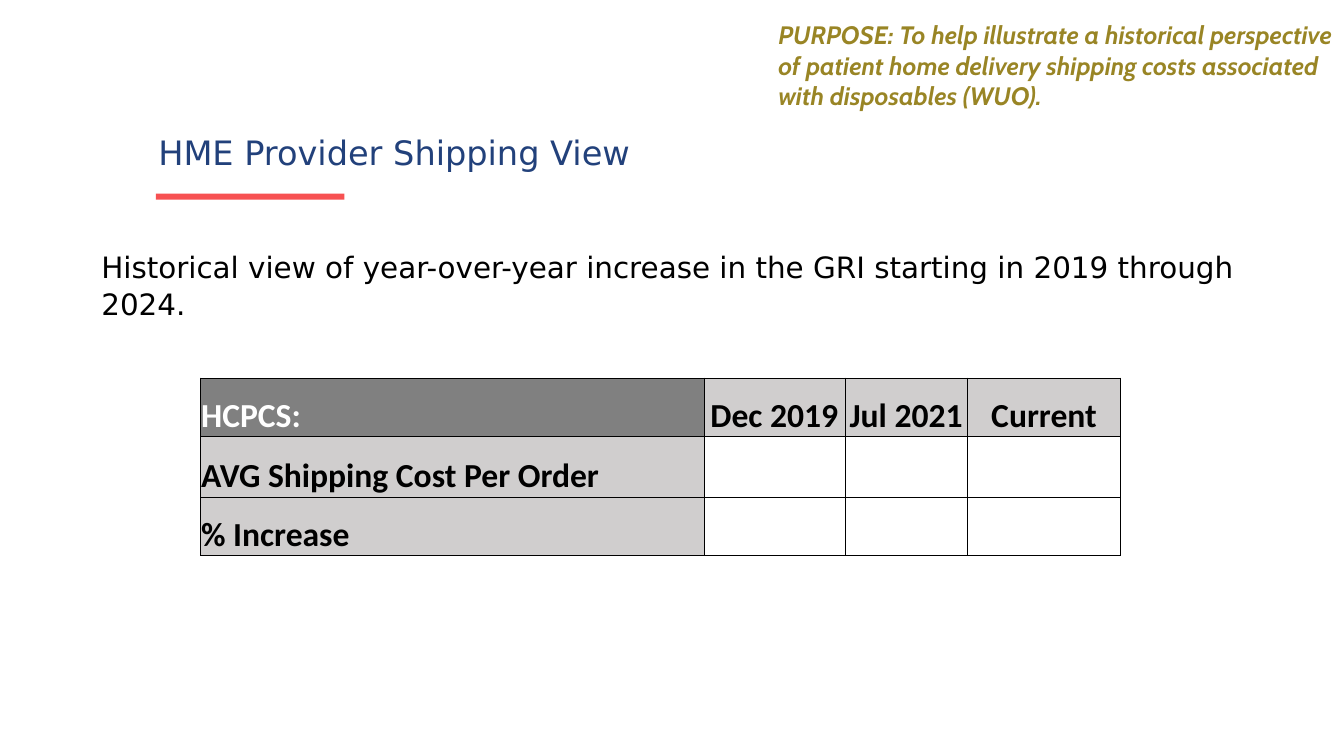
"""Build the HME provider shipping view slide."""
import pptx
import pptx.dml.color
import pptx.enum.shapes
import pptx.enum.text
import pptx.oxml
import pptx.oxml.ns
import pptx.util

PX = 9144
NAVY = pptx.dml.color.RGBColor(0x22, 0x41, 0x7B)
CORAL = pptx.dml.color.RGBColor(0xF7, 0x51, 0x52)
OLIVE = pptx.dml.color.RGBColor(0x99, 0x85, 0x25)
BLACK = pptx.dml.color.RGBColor(0, 0, 0)
WHITE = pptx.dml.color.RGBColor(255, 255, 255)
DARK_GREY = pptx.dml.color.RGBColor(0x80, 0x80, 0x80)
LIGHT_GREY = pptx.dml.color.RGBColor(0xD0, 0xCE, 0xCE)

COLUMN_WIDTHS = (998, 280, 243, 304)
ROW_HEIGHTS = (116, 120, 116)
ROWS = (
    ("HCPCS:", "Dec 2019", "Jul 2021", "Current"),
    ("AVG Shipping Cost Per Order", "", "", ""),
    ("% Increase", "", "", ""),
)


def px(*lengths):
    return [pptx.util.Emu(length * PX) for length in lengths]


def style(paragraph, size, name, color, bold=False, italic=False):
    font = paragraph.font
    font.size = pptx.util.Pt(size)
    font.name = name
    font.color.rgb = color
    font.bold = bold
    font.italic = italic


def add_text(slide, box, text, size, name, color, inset=10, line_spacing=None, **emphasis):
    frame = slide.shapes.add_textbox(*px(*box)).text_frame
    frame.word_wrap = True
    frame.margin_left, frame.margin_right = px(inset, inset)
    paragraph = frame.paragraphs[0]
    paragraph.text = text
    paragraph.line_spacing = line_spacing
    style(paragraph, size, name, color, **emphasis)


def add_accent(slide, box):
    accent = slide.shapes.add_shape(pptx.enum.shapes.MSO_SHAPE.RECTANGLE, *px(*box))
    accent.shadow.inherit = False
    accent.fill.solid()
    accent.fill.fore_color.rgb = CORAL
    accent.line.fill.background()


def set_borders(cell, widths):
    properties = cell._tc.get_or_add_tcPr()
    for side, width in zip("LRTB", widths):
        properties.append(pptx.oxml.parse_xml(
            f'<a:ln{side} {pptx.oxml.ns.nsdecls("a")} w="{pptx.util.Pt(width)}">'
            f'<a:solidFill><a:srgbClr val="{BLACK}"/></a:solidFill></a:ln{side}>'
        ))


def fill_cell(cell, text, row, column):
    header, label = row == 0, column == 0
    corner = header and label
    cell.vertical_anchor = pptx.enum.text.MSO_ANCHOR.BOTTOM
    cell.margin_left, cell.margin_right, cell.margin_top, cell.margin_bottom = px(1, 1, 1, 0)
    last_header = header and column == len(COLUMN_WIDTHS) - 1
    heavy = (label, last_header, row < 2, header)
    set_borders(cell, [1 if is_heavy else 0.5 for is_heavy in heavy])
    if header or label:
        cell.fill.solid()
        cell.fill.fore_color.rgb = DARK_GREY if corner else LIGHT_GREY
    else:
        cell.fill.background()
    paragraph = cell.text_frame.paragraphs[0]
    if text:
        paragraph.text = text
        style(paragraph, 48, "Calibri", WHITE if corner else BLACK, bold=True)
    if not label:
        paragraph.alignment = pptx.enum.text.PP_ALIGN.CENTER


def add_cost_table(slide, left, top):
    box = px(left, top, sum(COLUMN_WIDTHS), sum(ROW_HEIGHTS))
    table = slide.shapes.add_table(len(ROWS), len(COLUMN_WIDTHS), *box).table
    table.first_row = table.horz_banding = False
    for column, width in zip(table.columns, px(*COLUMN_WIDTHS)):
        column.width = width
    for row, height in zip(table.rows, px(*ROW_HEIGHTS)):
        row.height = height
    for row, texts in enumerate(ROWS):
        for column, text in enumerate(texts):
            fill_cell(table.cell(row, column), text, row, column)


def main():
    deck = pptx.Presentation()
    deck.slide_width, deck.slide_height = px(2666, 1500)
    slide = deck.slides.add_slide(deck.slide_layouts[6])
    add_accent(slide, (309, 384, 374, 12))
    add_text(slide, (309, 157, 2163, 227), "HME Provider Shipping View",
             48, "DejaVu Sans", NAVY, inset=5, line_spacing=pptx.util.Pt(130))
    add_text(slide, (196, 486, 2277, 701),
             "Historical view of year-over-year increase in the GRI starting in 2019 through 2024.",
             42, "DejaVu Sans", BLACK, inset=5, line_spacing=1.05)
    add_cost_table(slide, 398, 750)
    add_text(slide, (1534, 34, 1132, 252),
             "PURPOSE: To help illustrate a historical perspective of patient home delivery "
             "shipping costs associated with disposables (WUO).",
             36, "Cabin", OLIVE, bold=True, italic=True)
    deck.save("out.pptx")


if __name__ == "__main__":
    main()
